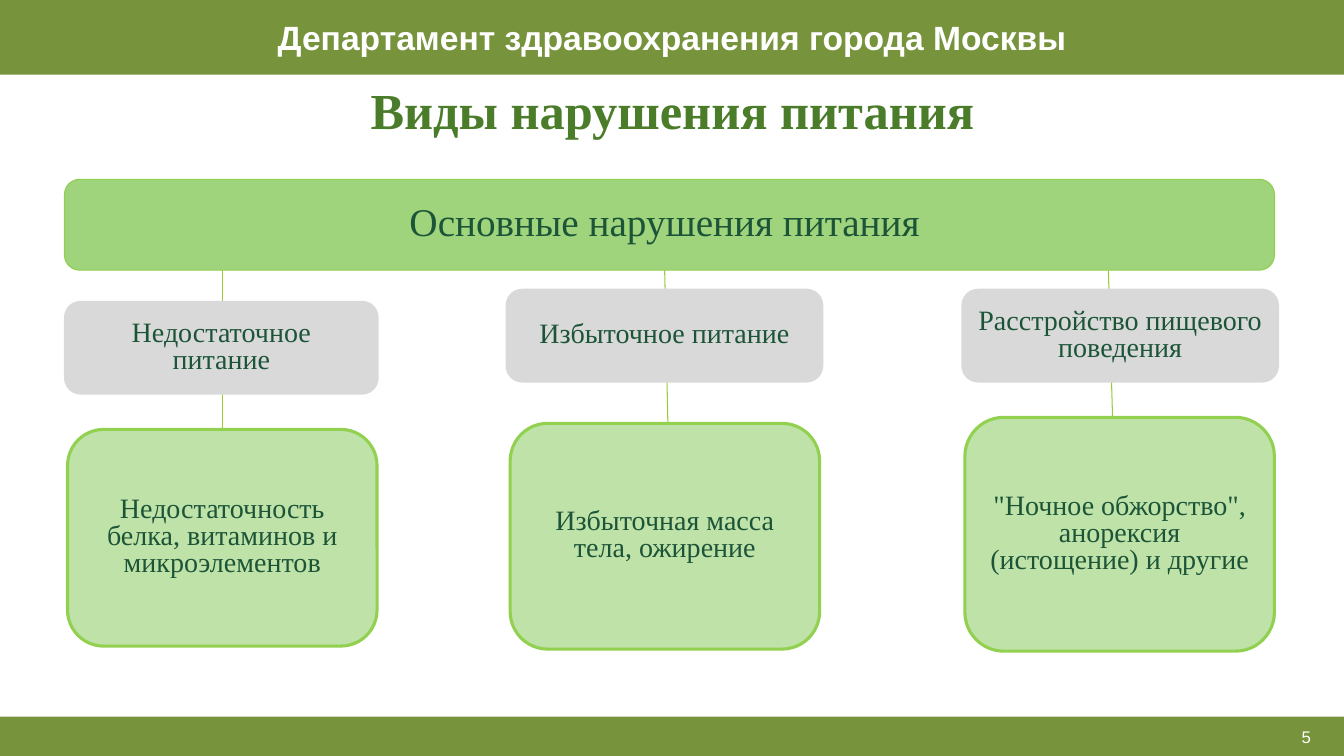
"""Build a slide that charts the main kinds of eating disorder."""
from lxml import etree
from pptx import Presentation
from pptx.dml.color import RGBColor
from pptx.enum.shapes import MSO_CONNECTOR, MSO_SHAPE
from pptx.enum.text import MSO_ANCHOR, PP_ALIGN
from pptx.oxml.ns import qn
from pptx.util import Inches, Pt

RECT = MSO_SHAPE.RECTANGLE
ROUND = MSO_SHAPE.FLOWCHART_ALTERNATE_PROCESS
LINE = MSO_CONNECTOR.STRAIGHT
MIDDLE = MSO_ANCHOR.MIDDLE
CENTER = PP_ALIGN.CENTER
RIGHT = PP_ALIGN.RIGHT

COLORS = {
    "band": "77933C", "white": "FFFFFF", "title": "4A7C29", "text": "1C5438",
    "root": "9FD47D", "kind": "D9D9D9", "case": "BFE2A8",
    "edge": "92D050", "link": "99CB38",
}
SERIF = "Times New Roman"
SANS = "Arial"
WIDE, HIGH = 13.33, 7.5

BRANCHES = [
    ("Недостаточное питание", (0.65, 3, 3.09, 0.9),
     "Недостаточность белка, витаминов и микроэлементов",
     (0.67, 4.26, 3.07, 2.15), (2.21, 2.56, 2.21, 6.42)),
    ("Избыточное питание", (5.03, 2.88, 3.12, 0.9),
     "Избыточная масса тела, ожирение",
     (5.06, 4.2, 3.07, 2.24), (6.59, 2.56, 6.67, 6.38)),
    ("Расстройство пищевого поведения", (9.55, 2.88, 3.12, 0.9),
     "\"Ночное обжорство\", анорексия (истощение) и другие",
     (9.57, 4.14, 3.07, 2.32), (10.99, 2.56, 11.1, 6.46)),
]


def color(name):
    return RGBColor.from_string(COLORS[name])


def write(shape, text, size=20, font=SERIF, ink="text", bold=False,
          align=CENTER, pitch=0.8):
    frame = shape.text_frame
    frame.word_wrap = True
    frame.vertical_anchor = MIDDLE
    para = frame.paragraphs[0]
    para.alignment = align
    para.line_spacing = pitch
    run = para.add_run()
    run.text = text
    run.font.name = font
    run.font.size = Pt(size)
    run.font.bold = bold
    run.font.color.rgb = color(ink)


class Board:
    def __init__(self, slide):
        self.shapes = slide.shapes

    def box(self, place, fill, edge=None, weight=2.22, form=ROUND):
        shape = self.shapes.add_shape(form, *map(Inches, place))
        shape.shadow.inherit = False
        shape.fill.solid()
        shape.fill.fore_color.rgb = color(fill)
        if edge:
            shape.line.color.rgb = color(edge)
            shape.line.width = Pt(weight)
        else:
            shape.line.fill.background()
        return shape

    def label(self, place, text, **style):
        write(self.shapes.add_textbox(*map(Inches, place)), text, **style)

    def link(self, ends):
        line = self.shapes.add_connector(LINE, *map(Inches, ends))
        line.line.color.rgb = color("link")
        line.line.width = Pt(0.75)
        etree.SubElement(line.element.spPr, qn("a:effectLst"))


def main():
    deck = Presentation()
    deck.slide_width = Inches(WIDE)
    deck.slide_height = Inches(HIGH)
    board = Board(deck.slides.add_slide(deck.slide_layouts[6]))

    board.box((0, 7.11, WIDE, 0.39), "band", form=RECT)
    header = board.box((0, 0, WIDE, 0.74), "band", form=RECT)
    write(header, "Департамент здравоохранения города Москвы", size=24,
          font=SANS, ink="white", bold=True, pitch=1.0)
    board.label((10.1, 7.15, 3, 0.32), "5", size=12, font=SANS, ink="white",
                align=RIGHT, pitch=1.0)
    board.label((0.62, 0.76, 12.1, 0.73), "Виды нарушения питания", size=36,
                ink="title", bold=True, pitch=0.9)

    for branch in BRANCHES:
        board.link(branch[-1])
    root = board.box((0.64, 1.78, 12, 0.9), "root", "edge", 0.85)
    write(root, "Основные нарушения питания ", size=28)
    for kind, top, case, base, ends in BRANCHES:
        write(board.box(top, "kind", "kind"), kind)
        write(board.box(base, "case", "edge"), case)

    deck.save("out.pptx")


if __name__ == "__main__":
    main()
